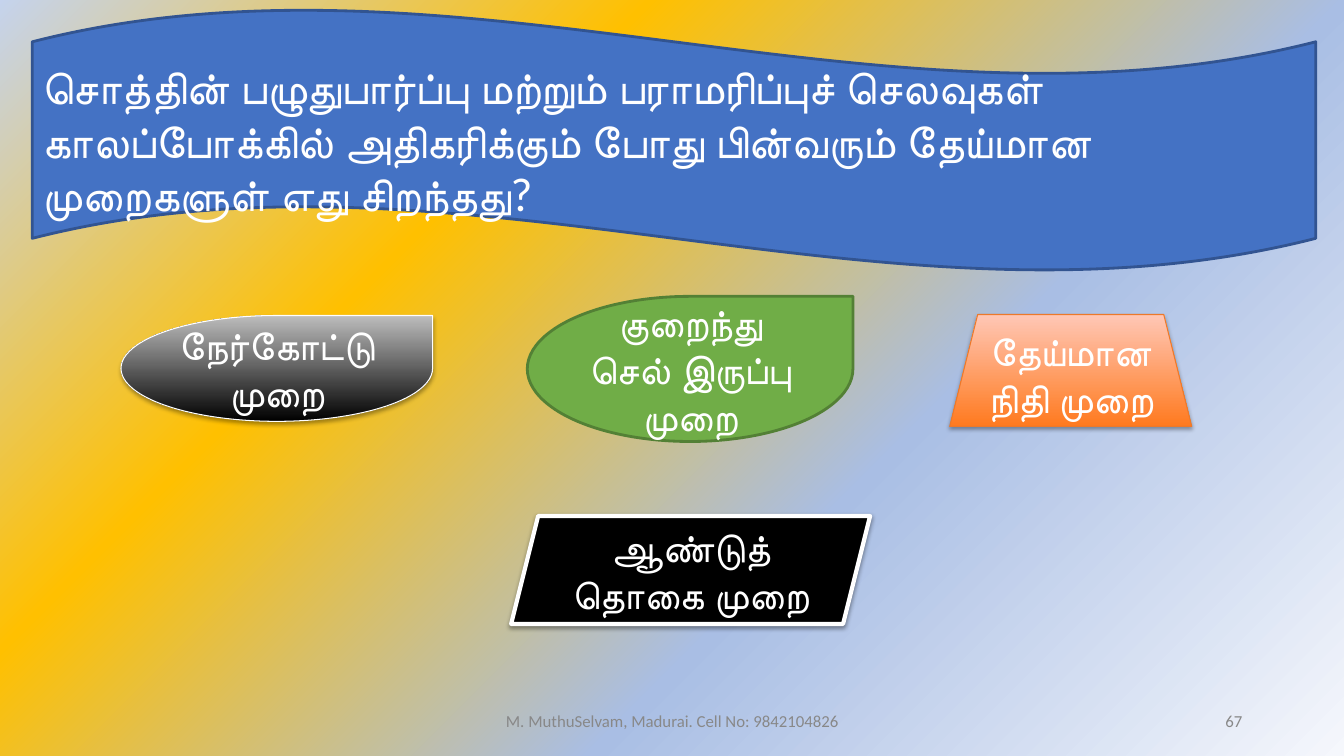
from dataclasses import dataclass

from pptx import Presentation
from pptx.dml.color import RGBColor
from pptx.enum.shapes import MSO_SHAPE
from pptx.enum.text import MSO_ANCHOR, MSO_AUTO_SIZE, PP_ALIGN
from pptx.oxml import parse_xml
from pptx.oxml.ns import nsdecls, qn
from pptx.slide import Slide
from pptx.text.text import TextFrame
from pptx.util import Inches, Pt

HUES = {
    "white": "FFFFFF", "black": "000000", "gray": "888888", "silver": "BDBDBD",
    "blue": "4472C4", "navy": "325491", "green": "70AD47", "moss": "538035",
    "orange": "FF7A1F", "peach": "FFC7B6", "rust": "EC792B",
    "pale": "F5F7FC", "sky": "A9BEE4", "gold": "FFC000", "mist": "C5D3ED",
}
Box = tuple[float, float, float, float]


@dataclass
class Panel:
    kind: MSO_SHAPE
    box: Box
    fills: tuple[str, ...]
    edge: str
    width: float
    text: str = ""
    shade: int = 0
    drop: int = 0


@dataclass
class Note:
    box: Box
    text: str
    align: PP_ALIGN


TITLE = ("சொத்தின் பழுதுபார்ப்பு மற்றும் பராமரிப்புச் செலவுகள் காலப்போக்கில் "
         "அதிகரிக்கும் போது பின்வரும் தேய்மான முறைகளுள் எது சிறந்தது?")
PANELS = [
    Panel(MSO_SHAPE.WAVE, (0.32, 0.09, 12.73, 2.6), ("blue",), "navy", 2),
    Panel(MSO_SHAPE.TEAR, (1.2, 3.13, 3.09, 1.05), ("black", "silver"), "white", 0.75,
          "நேர்கோட்டு முறை", 35, 23000),
    Panel(MSO_SHAPE.TRAPEZOID, (9.42, 3.12, 2.4, 1.11), ("orange", "peach"), "rust", 0.75,
          "தேய்மான நிதி முறை", 35, 23000),
    Panel(MSO_SHAPE.PARALLELOGRAM, (5.07, 5.12, 3.56, 1.07), ("black",), "white", 3,
          "ஆண்டுத் தொகை முறை", 38, 20000),
    Panel(MSO_SHAPE.TEAR, (5.23, 2.94, 3.23, 1.44), ("green",), "moss", 2,
          "குறைந்து செல் இருப்பு முறை"),
]
NOTES = [
    Note((4.42, 6.95, 4.5, 0.4), "M. MuthuSelvam, Madurai. Cell No: 9842104826", PP_ALIGN.CENTER),
    Note((9.42, 6.95, 3, 0.4), "67", PP_ALIGN.RIGHT),
]
STOPS = [(0, "pale"), (36, "sky"), (69, "gold"), (100, "mist")]


def hue(name: str) -> RGBColor:
    return RGBColor.from_string(HUES[name])


def write(frame: TextFrame, text: str, size: int, font: str, color: str, align: PP_ALIGN) -> None:
    frame.text = text
    frame.word_wrap = True
    frame.auto_size = MSO_AUTO_SIZE.NONE
    frame.vertical_anchor = MSO_ANCHOR.MIDDLE
    line = frame.paragraphs[0]
    line.alignment = align
    line.line_spacing = 1.0
    line.space_before = Pt(0)
    for run in line.runs:
        run.font.size = Pt(size)
        run.font.name = font
        run.font.color.rgb = hue(color)


def paint(slide: Slide) -> None:
    slide.background.fill.solid()
    base = slide.element.find(".//" + qn("p:bgPr"))
    stops = "".join(f'<a:gs pos="{pos * 1000}"><a:srgbClr val="{HUES[name]}"/></a:gs>'
                    for pos, name in STOPS)
    grad = parse_xml(
        f'<a:gradFill {nsdecls("a")} rotWithShape="1"><a:gsLst>{stops}</a:gsLst>'
        '<a:path path="circle"><a:fillToRect l="100000" t="100000"/></a:path>'
        '<a:tileRect r="-100000" b="-100000"/></a:gradFill>')
    base.replace(base.find(qn("a:solidFill")), grad)


def draw(slide: Slide, panel: Panel) -> None:
    shape = slide.shapes.add_shape(panel.kind, *map(Inches, panel.box))
    if len(panel.fills) == 1:
        shape.fill.solid()
        shape.fill.fore_color.rgb = hue(panel.fills[0])
    else:
        shape.fill.gradient()
        shape.fill.gradient_angle = 90
        for pos, (stop, name) in enumerate(zip(shape.fill.gradient_stops, panel.fills)):
            stop.position = pos
            stop.color.rgb = hue(name)
    shape.line.color.rgb = hue(panel.edge)
    shape.line.width = Pt(panel.width)
    shape.shadow.inherit = False
    if panel.shade:
        effects = shape.element.spPr.find(qn("a:effectLst"))
        effects.append(parse_xml(
            f'<a:outerShdw {nsdecls("a")} blurRad="40000" dist="{panel.drop}" dir="5400000" '
            f'rotWithShape="0"><a:srgbClr val="{HUES["black"]}">'
            f'<a:alpha val="{panel.shade * 1000}"/></a:srgbClr></a:outerShdw>'))
    if panel.text:
        write(shape.text_frame, panel.text, 28, "Lato", "white", PP_ALIGN.CENTER)


def head(slide: Slide) -> None:
    title = slide.shapes.title
    title.left, title.top, title.width, title.height = map(Inches, (0.32, 0.74, 12.73, 1.3))
    write(title.text_frame, TITLE, 32, "Lato", "white", PP_ALIGN.LEFT)
    slide.shapes.element.append(title.element)


def main() -> None:
    deck = Presentation()
    deck.slide_width, deck.slide_height = Inches(13.33), Inches(7.5)
    slide = deck.slides.add_slide(deck.slide_layouts[5])
    paint(slide)
    for panel in PANELS:
        draw(slide, panel)
    head(slide)
    for note in NOTES:
        label = slide.shapes.add_textbox(*map(Inches, note.box))
        write(label.text_frame, note.text, 12, "Calibri", "gray", note.align)
    deck.save("out.pptx")


if __name__ == "__main__":
    main()
